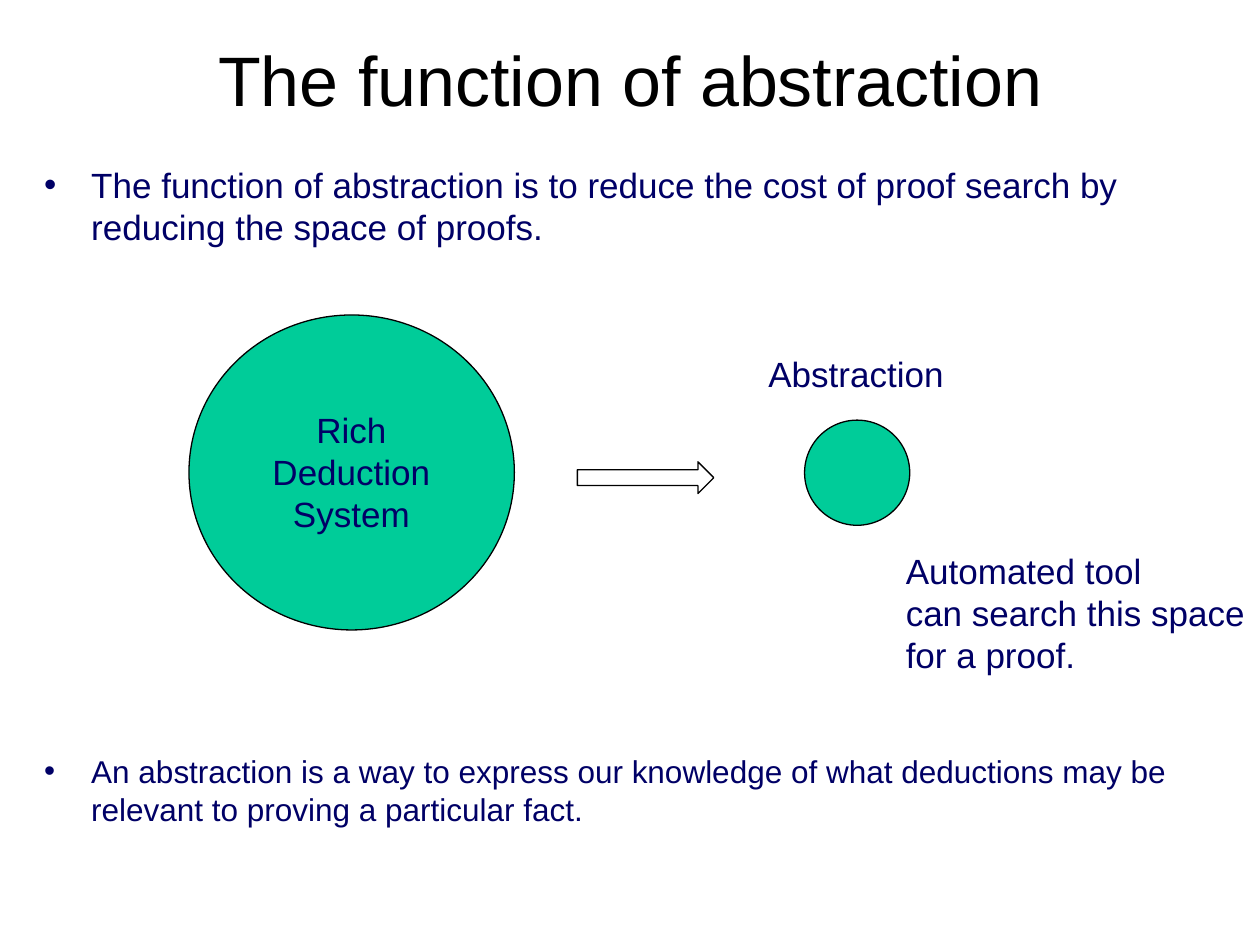
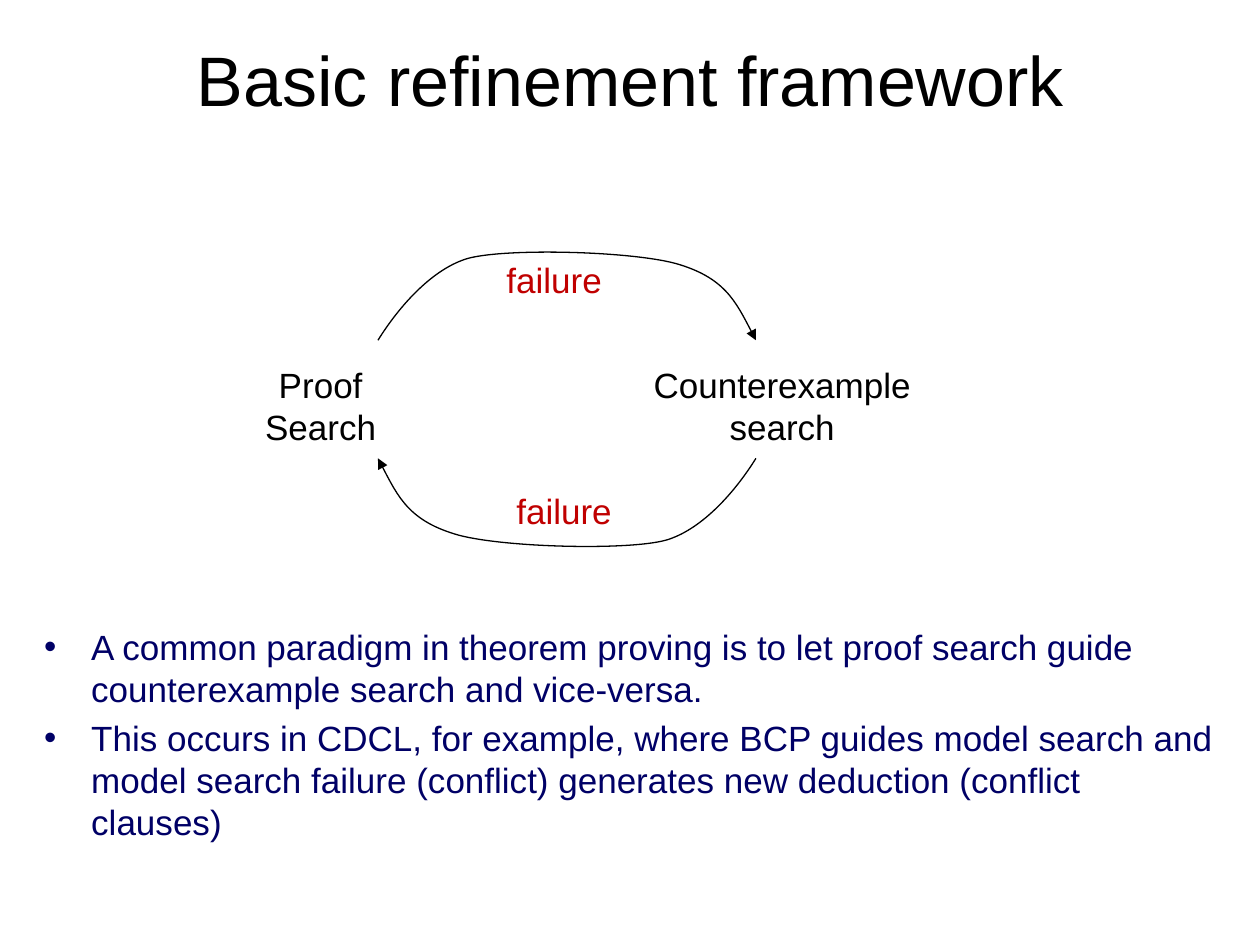
from lxml import etree
from pptx import Presentation
from pptx.dml.color import RGBColor
from pptx.enum.shapes import MSO_SHAPE
from pptx.enum.text import MSO_ANCHOR, MSO_AUTO_SIZE, PP_ALIGN
from pptx.oxml.ns import qn
from pptx.util import Cm, Pt

OVAL, ARROW = MSO_SHAPE.OVAL, MSO_SHAPE.RIGHT_ARROW
LEFT, CENTER = PP_ALIGN.LEFT, PP_ALIGN.CENTER
TOP, MIDDLE = MSO_ANCHOR.TOP, MSO_ANCHOR.MIDDLE
FIT_SHAPE = MSO_AUTO_SIZE.SHAPE_TO_FIT_TEXT

# Shared style, lengths in centimetres
FONT = "Arial"
BLACK, NAVY, RED, GREEN = "000000", "000066", "C00000", "00CC99"
MARGIN, CONTENT_WIDTH = 0.64, 24.13
TITLE_TOP, TITLE_HEIGHT, TITLE_SIZE = 0.42, 2.33, 40
TEXT_SIZE, LINE_WIDTH, BULLET_INDENT = 20, 0.75, 0.95

# Content: bullets are (top, height, size, texts),
# shapes are (kind, box, fill), labels are (lines, box, colour, alignment)
ABSTRACTION = {
    "title": "The function of abstraction",
    "bullets": [
        (3.18, 2.33, 20, ["The function of abstraction is to reduce the cost of proof search by "
                          "reducing the space of proofs."]),
        (15.03, 2.33, 18, ["An abstraction is a way to express our knowledge of what deductions "
                           "may be relevant to proving a particular fact."]),
    ],
    "shapes": [
        (OVAL, (3.81, 6.35, 6.56, 6.35), GREEN),
        (ARROW, (11.64, 9.31, 2.75, 0.64), None),
        (OVAL, (16.22, 8.47, 2.12, 2.12), GREEN),
    ],
    "labels": [
        (["Rich", "Deduction", "System"], (5.22, 8.11, 3.73, 2.82), NAVY, CENTER),
        (["Abstraction"], (15.24, 6.99, 4.06, 1.12), NAVY, LEFT),
        (["Automated tool", "can search this space", "for a proof."],
         (18.01, 10.95, 7.39, 2.82), NAVY, LEFT),
    ],
    "curves": [],
}

# Start point, then three Bézier points for each segment
FORWARD_CURVE = [
    (7.62, 6.86),
    (8.05, 6.17), (8.69, 5.46), (9.37, 5.23),
    (10.03, 5.0), (12.62, 5.05), (13.61, 5.31),
    (14.61, 5.59), (14.88, 6.17), (15.24, 6.86),
]
LOOP_X, LOOP_Y = 11.43, 8.05
RETURN_CURVE = [(2 * LOOP_X - x, 2 * LOOP_Y - y) for x, y in FORWARD_CURVE]

REFINEMENT = {
    "title": "Basic refinement framework",
    "bullets": [
        (12.49, 2.96, 20, [
            "A common paradigm in theorem proving is to let proof search guide counterexample "
            "search and vice-versa.",
            "This occurs in CDCL, for example, where BCP guides model search and model search "
            "failure (conflict) generates new deduction (conflict clauses)",
        ]),
    ],
    "shapes": [],
    "labels": [
        (["Proof", "Search"], (5.08, 7.2, 2.77, 1.96), BLACK, CENTER),
        (["Counterexample", "search"], (12.9, 7.2, 5.74, 1.96), BLACK, CENTER),
        (["failure"], (9.96, 5.08, 2.46, 1.12), RED, LEFT),
        (["failure"], (10.16, 9.74, 2.46, 1.12), RED, LEFT),
    ],
    "curves": [FORWARD_CURVE, RETURN_CURVE],
}


def color(hex_string):
    return RGBColor.from_string(hex_string)


def add_text(slide, lines, box, text_color, size=TEXT_SIZE, alignment=LEFT, anchor=TOP, wrap=True):
    """Add a text box with one paragraph per line and return its paragraphs."""
    frame = slide.shapes.add_textbox(*map(Cm, box)).text_frame
    frame.text = "\n".join(lines)
    frame.word_wrap = wrap
    frame.vertical_anchor = anchor
    if not wrap:
        frame.auto_size = FIT_SHAPE
    for paragraph in frame.paragraphs:
        paragraph.alignment = alignment
        paragraph.font.name = FONT
        paragraph.font.size = Pt(size)
        paragraph.font.color.rgb = color(text_color)
    return frame.paragraphs


def add_bullets(slide, top, height, size, texts):
    box = (MARGIN, top, CONTENT_WIDTH, height)
    for paragraph in add_text(slide, texts, box, NAVY, size):
        paragraph.space_before = Pt(0.2 * size)
        properties = paragraph._p.get_or_add_pPr()
        properties.set("marL", str(Cm(BULLET_INDENT)))
        properties.set("indent", str(-Cm(BULLET_INDENT)))
        # Bullet elements must precede the default run properties
        run_defaults = properties.find(qn("a:defRPr"))
        run_defaults.addprevious(etree.Element(qn("a:buFont"), typeface=FONT))
        run_defaults.addprevious(etree.Element(qn("a:buChar"), char="•"))


def style_shape(shape, fill=None):
    shape.shadow.inherit = False
    if fill:
        shape.fill.solid()
        shape.fill.fore_color.rgb = color(fill)
    else:
        shape.fill.background()
    shape.line.color.rgb = color(BLACK)
    shape.line.width = Pt(LINE_WIDTH)


def add_curve(slide, points):
    """Draw a smooth open curve that ends in an arrowhead."""
    start, *others = [(Cm(x), Cm(y)) for x, y in points]
    builder = slide.shapes.build_freeform(*start)
    builder.add_line_segments(others, close=False)
    shape = builder.convert_to_shape()
    style_shape(shape)

    # Turn each three line segments into one Bézier segment
    segments = list(shape._element.iter(qn("a:lnTo")))
    for first in range(0, len(segments), 3):
        bezier = etree.Element(qn("a:cubicBezTo"))
        segments[first].addprevious(bezier)
        for segment in segments[first:first + 3]:
            bezier.append(segment[0])
            segment.getparent().remove(segment)
    etree.SubElement(shape.line._get_or_add_ln(), qn("a:tailEnd"), type="triangle")


def add_slide(presentation, content):
    slide = presentation.slides.add_slide(presentation.slide_layouts[6])
    add_text(slide, [content["title"]], (MARGIN, TITLE_TOP, CONTENT_WIDTH, TITLE_HEIGHT),
             BLACK, TITLE_SIZE, CENTER, MIDDLE)
    for bullets in content["bullets"]:
        add_bullets(slide, *bullets)
    for kind, box, fill in content["shapes"]:
        style_shape(slide.shapes.add_shape(kind, *map(Cm, box)), fill)
    for points in content["curves"]:
        add_curve(slide, points)
    for lines, box, text_color, alignment in content["labels"]:
        add_text(slide, lines, box, text_color, alignment=alignment, wrap=False)


def main():
    presentation = Presentation()
    presentation.slide_width, presentation.slide_height = Cm(25.4), Cm(19.05)
    for content in (ABSTRACTION, REFINEMENT):
        add_slide(presentation, content)
    presentation.save("out.pptx")


if __name__ == "__main__":
    main()
